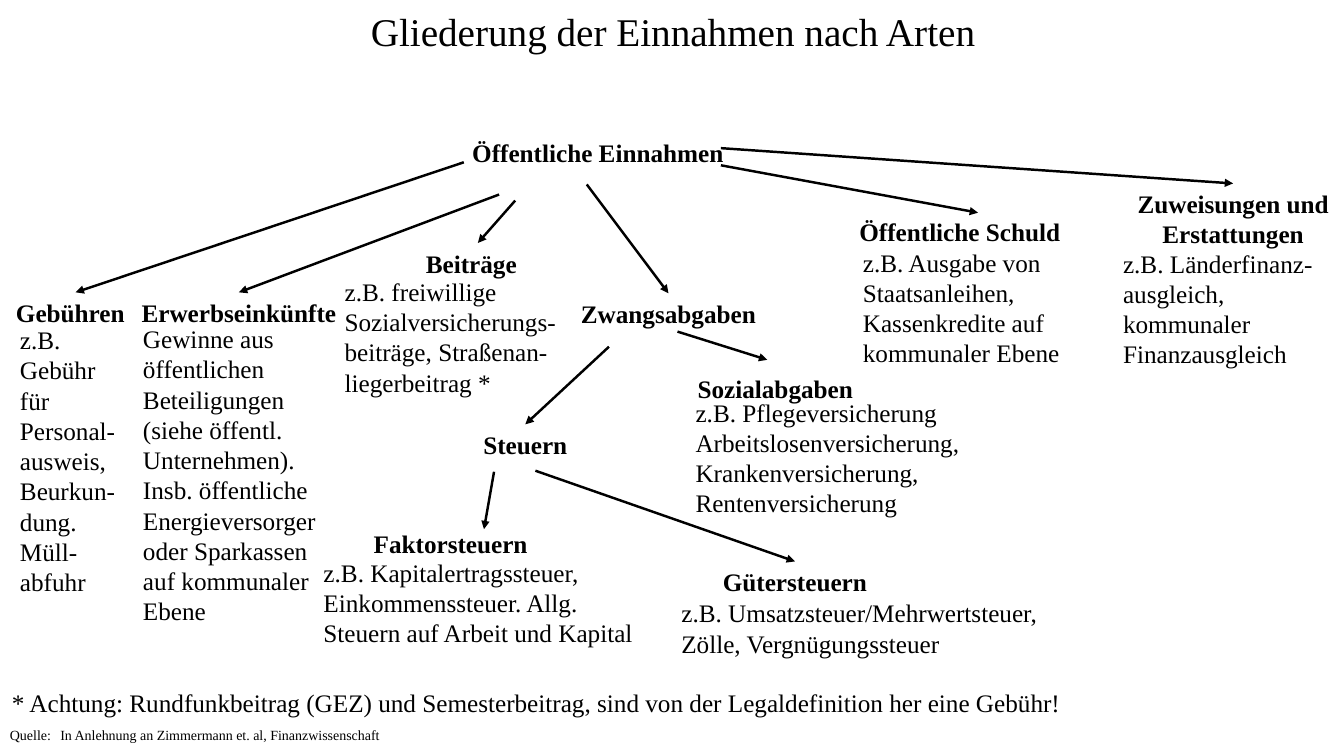
from dataclasses import dataclass

import lxml.etree
import pptx
import pptx.dml.color
import pptx.enum.shapes
import pptx.enum.text
import pptx.oxml.ns
import pptx.shapes.autoshape
import pptx.slide
import pptx.util

EMU_PER_PX = 9144  # 100 px to the inch
BLACK = pptx.dml.color.RGBColor(0, 0, 0)
FONT_NAME = "Times New Roman"
TOP_SIDE = 0


@dataclass(frozen=True)
class Label:
    left: int
    top: int
    width: int
    height: int
    paragraphs: tuple[str, ...]
    size: int = 18
    bold: bool = False
    centered: bool = False
    wrap: bool = True
    middle: bool = False


@dataclass(frozen=True)
class Arrow:
    """An arrow to a point, or to the top of the heading named by target."""

    start: tuple[int, int]
    end: tuple[int, int] = (0, 0)
    target: str = ""


def heading(left: int, top: int, width: int, height: int, *lines: str,
            centered: bool = True, wrap: bool = True) -> Label:
    return Label(left, top, width, height, lines, bold=True, centered=centered, wrap=wrap)


HEADINGS = {
    "Einnahmen": heading(457, 131, 272, 40, "Öffentliche Einnahmen", wrap=False),
    "Gebühren": heading(6, 290, 138, 39, "Gebühren", centered=False),
    "Erwerbseinkünfte": heading(124, 290, 226, 41, "Erwerbseinkünfte"),
    "Beiträge": heading(410, 241, 115, 40, "Beiträge"),
    "Zwangsabgaben": heading(565, 291, 196, 40, "Zwangsabgaben", wrap=False),
    "Schuld": heading(842, 210, 220, 37, "Öffentliche Schuld"),
    "Zuweisungen": heading(1117, 182, 212, 71, "Zuweisungen und", "Erstattungen", wrap=False),
    "Steuern": heading(469, 421, 104, 40, "Steuern", wrap=False),
    "Sozialabgaben": heading(682, 365, 181, 41, "Sozialabgaben", centered=False),
    "Faktorsteuern": heading(351, 519, 192, 45, "Faktorsteuern"),
    "Gütersteuern": heading(635, 557, 307, 46, "Gütersteuern"),
}

TEXTS = (
    Label(2, 1, 1331, 59, ("Gliederung der Einnahmen nach Arten",),
          size=28, centered=True, middle=True),
    Label(10, 317, 120, 279, (
        "z.B. Gebühr für Personal- ausweis,", "Beurkun- dung. Müll- abfuhr")),
    Label(132, 316, 200, 312, (
        "Gewinne aus öffentlichen Beteiligungen (siehe öffentl. Unternehmen). "
        "Insb. öffentliche Energieversorger oder Sparkassen auf kommunaler Ebene",)),
    Label(332, 269, 273, 131, (
        "z.B. freiwillige Sozialversicherungs-beiträge, Straßenan- liegerbeitrag *",)),
    Label(846, 240, 227, 130, (
        "z.B. Ausgabe von Staatsanleihen,", "Kassenkredite auf kommunaler Ebene")),
    Label(1104, 241, 236, 130, (
        "z.B. Länderfinanz- ausgleich,", "kommunaler Finanzausgleich")),
    Label(680, 389, 345, 137, (
        "z.B. Pflegeversicherung", "Arbeitslosenversicherung, Krankenversicherung,",
        "Rentenversicherung")),
    Label(311, 548, 368, 104, (
        "z.B. Kapitalertragssteuer, Einkommenssteuer. Allg.",
        "Steuern auf Arbeit und Kapital")),
    Label(666, 588, 407, 73, (
        "z.B. Umsatzsteuer/Mehrwertsteuer, Zölle, Vergnügungssteuer",)),
    Label(2, 677, 1141, 40, (
        "* Achtung: Rundfunkbeitrag (GEZ) und Semesterbeitrag, "
        "sind von der Legaldefinition her eine Gebühr!",)),
    Label(0, 716, 1331, 29, (
        "Quelle:\tIn Anlehnung an Zimmermann et. al, Finanzwissenschaft",), size=10),
)

ARROWS = (
    Arrow((460, 161), target="Gebühren"),
    Arrow((495, 193), target="Erwerbseinkünfte"),
    Arrow((511, 199), (474, 241)),
    Arrow((582, 183), target="Zwangsabgaben"),
    Arrow((715, 164), (970, 211)),
    Arrow((715, 147), target="Zuweisungen"),
    Arrow((604, 344), target="Steuern"),
    Arrow((672, 329), (761, 357)),
    Arrow((490, 468), (480, 525)),
    Arrow((531, 467), target="Gütersteuern"),
)


def px(length: int) -> pptx.util.Emu:
    return pptx.util.Emu(length * EMU_PER_PX)


def add_label(slide: pptx.slide.Slide, label: Label) -> pptx.shapes.autoshape.Shape:
    box = slide.shapes.add_textbox(
        px(label.left), px(label.top), px(label.width), px(label.height))
    frame = box.text_frame
    frame.word_wrap = label.wrap
    anchor = pptx.enum.text.MSO_ANCHOR
    frame.vertical_anchor = anchor.MIDDLE if label.middle else anchor.TOP
    frame.text = "\n".join(label.paragraphs)
    alignment = pptx.enum.text.PP_ALIGN
    for paragraph in frame.paragraphs:
        paragraph.alignment = alignment.CENTER if label.centered else alignment.LEFT
        paragraph.font.name = FONT_NAME
        paragraph.font.size = pptx.util.Pt(label.size)
        paragraph.font.bold = label.bold
        paragraph.font.color.rgb = BLACK
    return box


def add_arrow(slide: pptx.slide.Slide, arrow: Arrow,
              boxes: dict[str, pptx.shapes.autoshape.Shape]) -> None:
    connector = slide.shapes.add_connector(
        pptx.enum.shapes.MSO_CONNECTOR.STRAIGHT,
        *(px(length) for length in arrow.start + arrow.end))
    if arrow.target:
        connector.end_connect(boxes[arrow.target], TOP_SIDE)
    connector.line.color.rgb = BLACK
    connector.line.width = pptx.util.Pt(1.75)
    qualified = pptx.oxml.ns.qn
    properties = connector.element.spPr
    lxml.etree.SubElement(
        properties.find(qualified("a:ln")), qualified("a:tailEnd"), type="triangle")
    lxml.etree.SubElement(properties, qualified("a:effectLst"))


def main() -> None:
    presentation = pptx.Presentation()
    presentation.slide_width = px(1333)
    presentation.slide_height = px(750)
    slide = presentation.slides.add_slide(presentation.slide_layouts[6])
    boxes = {name: add_label(slide, label) for name, label in HEADINGS.items()}
    for label in TEXTS:
        add_label(slide, label)
    for arrow in ARROWS:
        add_arrow(slide, arrow, boxes)
    presentation.save("out.pptx")


if __name__ == "__main__":
    main()
